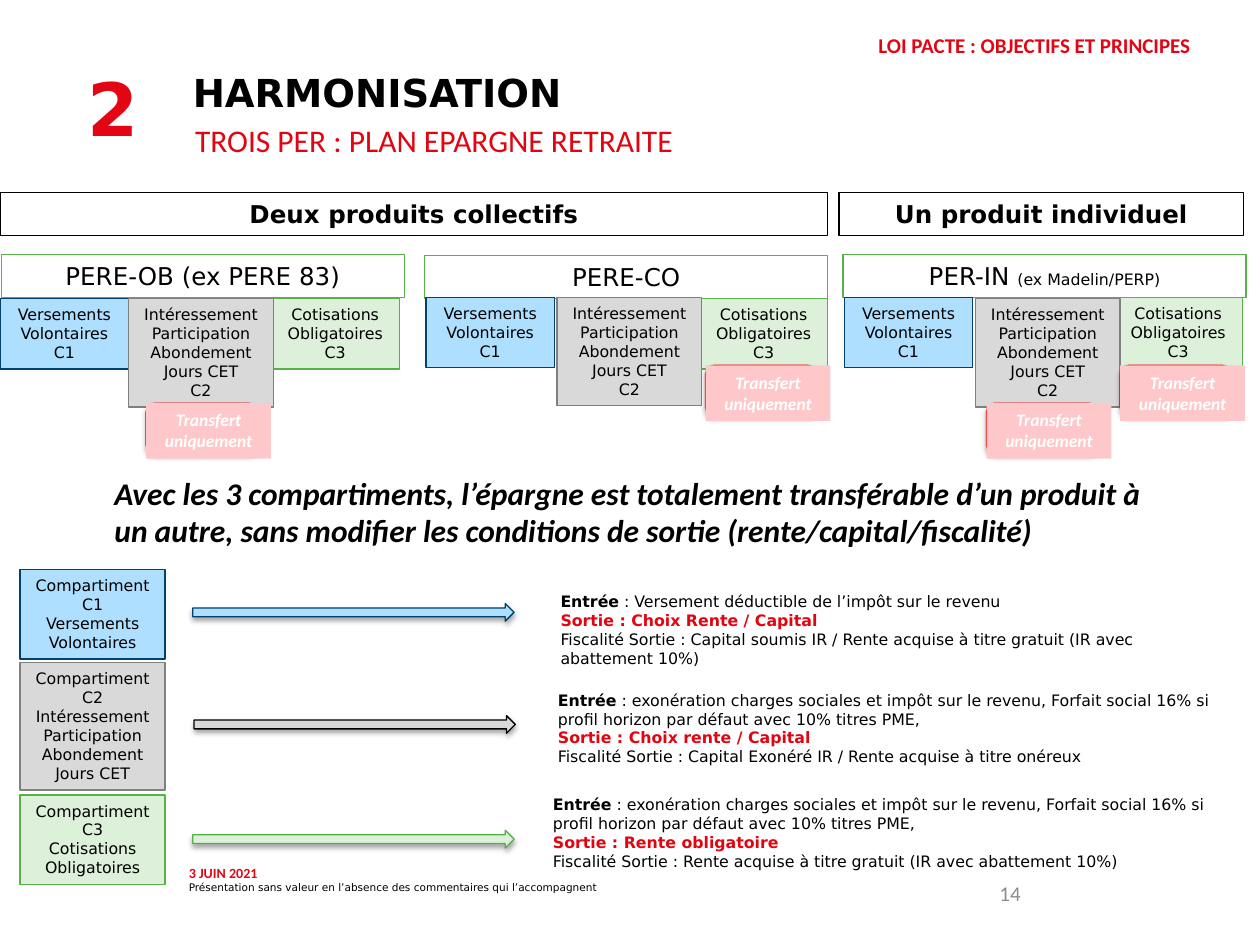
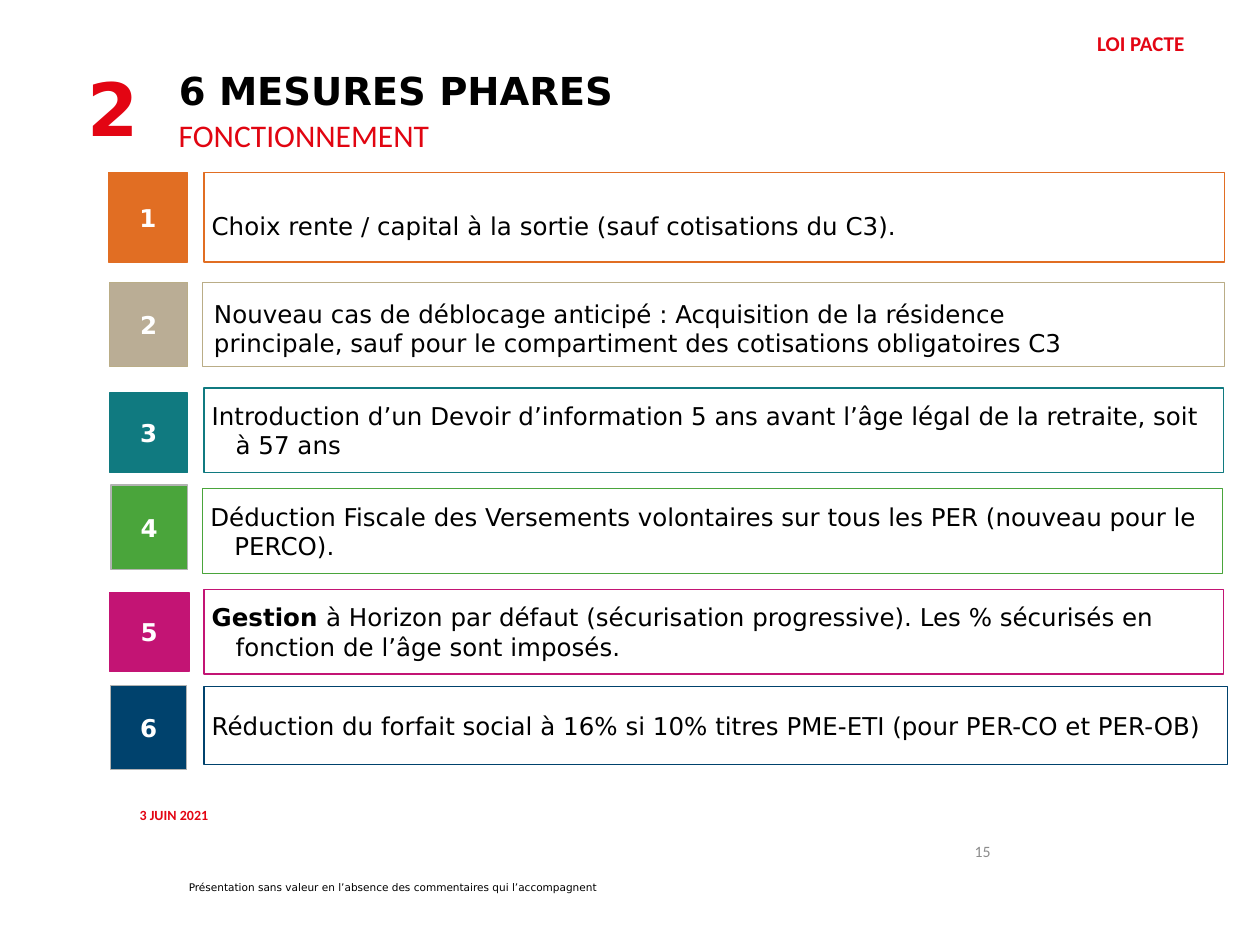
from lxml.etree import SubElement
from pptx import Presentation
from pptx.dml.color import RGBColor
from pptx.enum.shapes import MSO_SHAPE as Preset
from pptx.enum.text import MSO_ANCHOR as Anchor, MSO_AUTO_SIZE as AutoSize, PP_ALIGN as Align
from pptx.oxml.ns import qn
from pptx.util import Inches, Pt

# The slide is a grid of 10 columns by 7.5 rows of square cells.
CELL = Inches(1)
COLUMNS, ROWS = 10, 7.5

SANS, CALIBRI = "DejaVu Sans", "Calibri"
BLACK, WHITE, GREY = "000000", "FFFFFF", "8C8C8C"
RED, TEXT_RED = "E30513", "E10511"
GREEN, PINK, BORDER = "57B148", "FEC8CB", "B2B3B2"

# Fill, line, contents and box height of each savings compartment
COMPARTMENTS = {
    "C1": ("AFDFFF", "00426D", "Versements Volontaires", 0.56),
    "C2": ("D9D9D9", "808080", "Intéressement Participation Abondement Jours CET", 0.86),
    "C3": ("DDF0DA", GREEN, "Cotisations Obligatoires", 0.56),
}


def cells(*lengths):
    return [round(length * CELL) for length in lengths]


def color(hex_string):
    return RGBColor.from_string(hex_string)


def write(frame, paragraphs, size=9, font=SANS, ink=BLACK, bold=False, italic=False,
          align=Align.LEFT, anchor=Anchor.TOP, margins=(0.1, 0.05, 0.1, 0.05),
          hanging=0, wrap=True):
    """Fill a frame; a paragraph is a string or a list of (text, run format) pairs."""
    frame.auto_size = AutoSize.NONE
    frame.word_wrap = wrap
    frame.vertical_anchor = anchor
    (frame.margin_left, frame.margin_top,
     frame.margin_right, frame.margin_bottom) = cells(*margins)
    for index, runs in enumerate(paragraphs):
        paragraph = frame.add_paragraph() if index else frame.paragraphs[0]
        properties = paragraph._p.get_or_add_pPr()
        indent = cells(hanging)[0]
        properties.set("marL", str(indent))
        properties.set("indent", str(-indent))
        SubElement(properties, qn("a:buNone"))
        paragraph.alignment = align
        paragraph.space_before = Pt(0)
        for text, changes in [(runs, {})] if isinstance(runs, str) else runs:
            run = paragraph.add_run()
            run.text = text
            run.font.name = font
            run.font.size = Pt(changes.get("size", size))
            run.font.bold = changes.get("bold", bold)
            run.font.italic = italic
            run.font.color.rgb = color(changes.get("ink", ink))


def add_text(slide, box, *paragraphs, **text_format):
    write(slide.shapes.add_textbox(*cells(*box)).text_frame, paragraphs, **text_format)


def fill_placeholder(placeholder, box, text, **text_format):
    placeholder.left, placeholder.top, placeholder.width, placeholder.height = cells(*box)
    write(placeholder.text_frame, [text], anchor=Anchor.MIDDLE, bold=True, **text_format)


def add_shape(slide, box, *paragraphs, preset=Preset.RECTANGLE, fill=None, line=None,
              shadow=False, **text_format):
    shape = slide.shapes.add_shape(preset, *cells(*box))
    shape.shadow.inherit = False
    if fill:
        shape.fill.solid()
        shape.fill.fore_color.rgb = color(fill)
    else:
        shape.fill.background()
    if line:
        shape.line.color.rgb = color(line)
        shape.line.width = Pt(0.75)
    else:
        shape.line.fill.background()
    if shadow:
        add_shadow(shape)
    if paragraphs:
        write(shape.text_frame, paragraphs, **text_format)


def add_shadow(shape):
    effects = shape._element.spPr.find(qn("a:effectLst"))
    outer = SubElement(effects, qn("a:outerShdw"), blurRad=str(Pt(3.1)), dist=str(Pt(1.8)),
                       dir="5400000", rotWithShape="0")
    tint = SubElement(outer, qn("a:srgbClr"), val=BLACK)
    SubElement(tint, qn("a:alpha"), val="35000")


def add_slide(presentation, title, title_box, subtitle, subtitle_box, chapter, chapter_box,
              date_box, number, number_box, number_size):
    """Add a slide with the chapter number, headings and footers that all slides share."""
    slide = presentation.slides.add_slide(presentation.slide_layouts[3])
    number_holder, title_holder, chapter_holder = slide.placeholders
    add_text(slide, (1.4, 6.94, 3.53, 0.2),
             "Présentation sans valeur en l’absence des commentaires qui l’accompagnent", size=6)
    fill_placeholder(number_holder, (0.51, 0.49, 0.78, 0.72), "2",
                     size=42, ink=RED, align=Align.CENTER)
    fill_placeholder(title_holder, title_box, title, size=22)
    fill_placeholder(chapter_holder, chapter_box, chapter,
                     size=12, font=CALIBRI, ink=RED, align=Align.RIGHT)
    add_text(slide, subtitle_box, subtitle, size=18, font=CALIBRI, ink=TEXT_RED, wrap=False)
    add_text(slide, date_box, "3 JUIN 2021", size=8, font=CALIBRI, ink=RED, bold=True,
             anchor=Anchor.MIDDLE)
    add_text(slide, number_box, number, size=number_size, font=CALIBRI, ink=GREY,
             align=Align.RIGHT, anchor=Anchor.MIDDLE)
    return slide


def add_product(slide, left, top, name, places):
    """Draw a product header and its compartments, placed by left and top."""
    add_shape(slide, (left, top, 3.2, 0.34), name, line=GREEN, size=14, align=Align.CENTER)
    for code in ("C3", "C1", "C2"):
        fill, line, contents, height = COMPARTMENTS[code]
        width = 1.15 if code == "C2" else 1.02
        add_shape(slide, (*places[code], width, height), contents, code,
                  fill=fill, line=line, align=Align.CENTER)


def add_transfer_tag(slide, left, top, back=PINK):
    add_shape(slide, (left, top, 0.88, 0.4), preset=Preset.ROUNDED_RECTANGLE,
              fill=back, line="FF0000", shadow=True)
    add_shape(slide, (left, top, 0.99, 0.44), "Transfert uniquement", fill=PINK, size=10,
              font=CALIBRI, ink=WHITE, bold=True, italic=True, align=Align.CENTER)


def add_rule(slide, code, top, height, arrow, arrow_line, text_box, entry, exit_, tax):
    """Draw a compartment, its arrow and its entry, exit and tax rules."""
    fill, line, contents, _ = COMPARTMENTS[code]
    add_shape(slide, (0.16, top, 1.15, height), f"Compartiment {code}", contents,
              fill=fill, line=line, align=Align.CENTER)
    add_shape(slide, (*arrow, 2.55, 0.14), preset=Preset.RIGHT_ARROW, fill=fill,
              line=arrow_line, shadow=True)
    add_text(slide, text_box,
             [("Entrée", {"bold": True}), (f" : {entry}", {})],
             [(f"Sortie : {exit_}", {"bold": True, "ink": TEXT_RED})],
             f"Fiscalité Sortie : {tax}")


def add_measure(slide, number, accent, badge, frame, text, fill=None, border=None,
                text_box=None, top_margin=0.04):
    """Draw a numbered badge and its framed sentence, or a text box over the frame."""
    if text_box:
        add_shape(slide, frame, line=accent)
        add_text(slide, text_box, text, size=14)
    else:
        add_shape(slide, frame, text, line=accent, size=14, anchor=Anchor.MIDDLE,
                  margins=(0.06, top_margin, 0.03, 0.04), hanging=0.19)
    add_shape(slide, badge, str(number), fill=fill or accent, line=border or accent, size=14,
              ink=WHITE, bold=True, align=Align.CENTER, anchor=Anchor.MIDDLE)


def build_harmonisation(presentation):
    slide = add_slide(
        presentation, "HARMONISATION", (1.43, 0.55, 5.87, 0.36),
        "TROIS PER : PLAN EPARGNE RETRAITE", (1.45, 0.91, 4.03, 0.4),
        "LOI PACTE : OBJECTIFS ET PRINCIPES", (5.48, 0.16, 4.07, 0.4),
        (1.4, 6.73, 3.51, 0.4), "14", (5.87, 6.89, 2.33, 0.4), 12)

    for left, width, family in ((0, 6.57, "Deux produits collectifs"),
                                (6.66, 3.21, "Un produit individuel")):
        add_shape(slide, (left, 1.53, width, 0.34), family, line=BLACK, size=14, bold=True,
                  align=Align.CENTER)

    add_product(slide, 0.01, 2.02, "PERE-OB (ex PERE 83)",
                {"C1": (0, 2.37), "C2": (1.02, 2.37), "C3": (2.15, 2.37)})
    add_product(slide, 3.37, 2.03, "PERE-CO",
                {"C1": (3.38, 2.36), "C2": (4.42, 2.36), "C3": (5.55, 2.37)})
    add_product(slide, 6.69, 2.02, [("PER-IN ", {}), ("(ex Madelin/PERP)", {"size": 9})],
                {"C1": (6.7, 2.36), "C2": (7.74, 2.37), "C3": (8.84, 2.36)})

    add_text(slide, (0.81, 3.71, 8.51, 0.71),
             "Avec les 3 compartiments, l’épargne est totalement transférable d’un produit à "
             "un autre, sans modifier les conditions de sortie (rente/capital/fiscalité)",
             size=18, font=CALIBRI, bold=True, italic=True)

    exemption = ("exonération charges sociales et impôt sur le revenu, Forfait social 16% si "
                 "profil horizon par défaut avec 10% titres PME,")
    add_rule(slide, "C1", 4.52, 0.71, (1.53, 4.79), "00426D", (4.35, 4.65, 5.42, 0.71),
             "Versement déductible de l’impôt sur le revenu", "Choix Rente / Capital",
             "Capital soumis IR / Rente acquise à titre gratuit (IR avec abattement 10%)")
    add_rule(slide, "C2", 5.26, 1.01, (1.54, 5.68), BLACK, (4.33, 5.43, 5.42, 0.86),
             exemption, "Choix rente / Capital",
             "Capital Exonéré IR / Rente acquise à titre onéreux")
    add_rule(slide, "C3", 6.31, 0.71, (1.53, 6.59), "53B044", (4.29, 6.26, 5.42, 0.71),
             exemption, "Rente obligatoire",
             "Rente acquise à titre gratuit (IR avec abattement 10%)")

    add_transfer_tag(slide, 8.89, 2.9)
    add_transfer_tag(slide, 7.83, 3.2, back="D70015")
    add_transfer_tag(slide, 5.6, 2.9)
    add_transfer_tag(slide, 1.16, 3.2)


def build_measures(presentation):
    slide = add_slide(
        presentation, "6 MESURES PHARES", (1.32, 0.42, 4.05, 0.59),
        "FONCTIONNEMENT", (1.32, 0.87, 2.21, 0.4),
        "LOI PACTE", (6.44, 0.19, 3.06, 0.3),
        (1.01, 6.32, 2.63, 0.3), "15", (6.21, 6.61, 1.75, 0.3), 9)

    add_measure(slide, 1, "E16E23", (0.86, 1.37, 0.63, 0.71), (1.62, 1.37, 8.1, 0.71),
                "Choix rente / capital à la sortie (sauf cotisations du C3).", top_margin=0.18)
    add_measure(slide, 2, "BAAD87", (0.87, 2.24, 0.62, 0.67), (1.61, 2.24, 8.11, 0.67),
                "Nouveau cas de déblocage anticipé : Acquisition de la résidence principale, "
                "sauf pour le compartiment des cotisations obligatoires C3",
                fill="BAAD95", text_box=(1.6, 2.32, 7.5, 0.61))
    add_measure(slide, 3, "107A80", (0.87, 3.12, 0.62, 0.63), (1.62, 3.08, 8.09, 0.67),
                "Introduction d’un Devoir d’information 5 ans avant l’âge légal de la "
                "retraite, soit à 57 ans")
    add_measure(slide, 4, "4AA53B", (0.88, 3.85, 0.61, 0.67), (1.61, 3.88, 8.09, 0.67),
                "Déduction Fiscale des Versements volontaires sur tous les PER (nouveau pour "
                "le PERCO).", border=BORDER)
    add_measure(slide, 5, "C31474", (0.87, 4.7, 0.63, 0.63), (1.62, 4.68, 8.09, 0.67),
                [("Gestion ", {"bold": True}),
                 ("à Horizon par défaut (sécurisation progressive). Les % sécurisés en "
                  "fonction de l’âge sont imposés.", {})])
    add_measure(slide, 6, "00426D", (0.88, 5.44, 0.6, 0.67), (1.62, 5.45, 8.12, 0.62),
                "Réduction du forfait social à 16% si 10% titres PME-ETI (pour PER-CO et "
                "PER-OB)", border=BORDER)


def main():
    presentation = Presentation()
    presentation.slide_width, presentation.slide_height = cells(COLUMNS, ROWS)
    build_harmonisation(presentation)
    build_measures(presentation)
    presentation.save("out.pptx")


if __name__ == "__main__":
    main()
